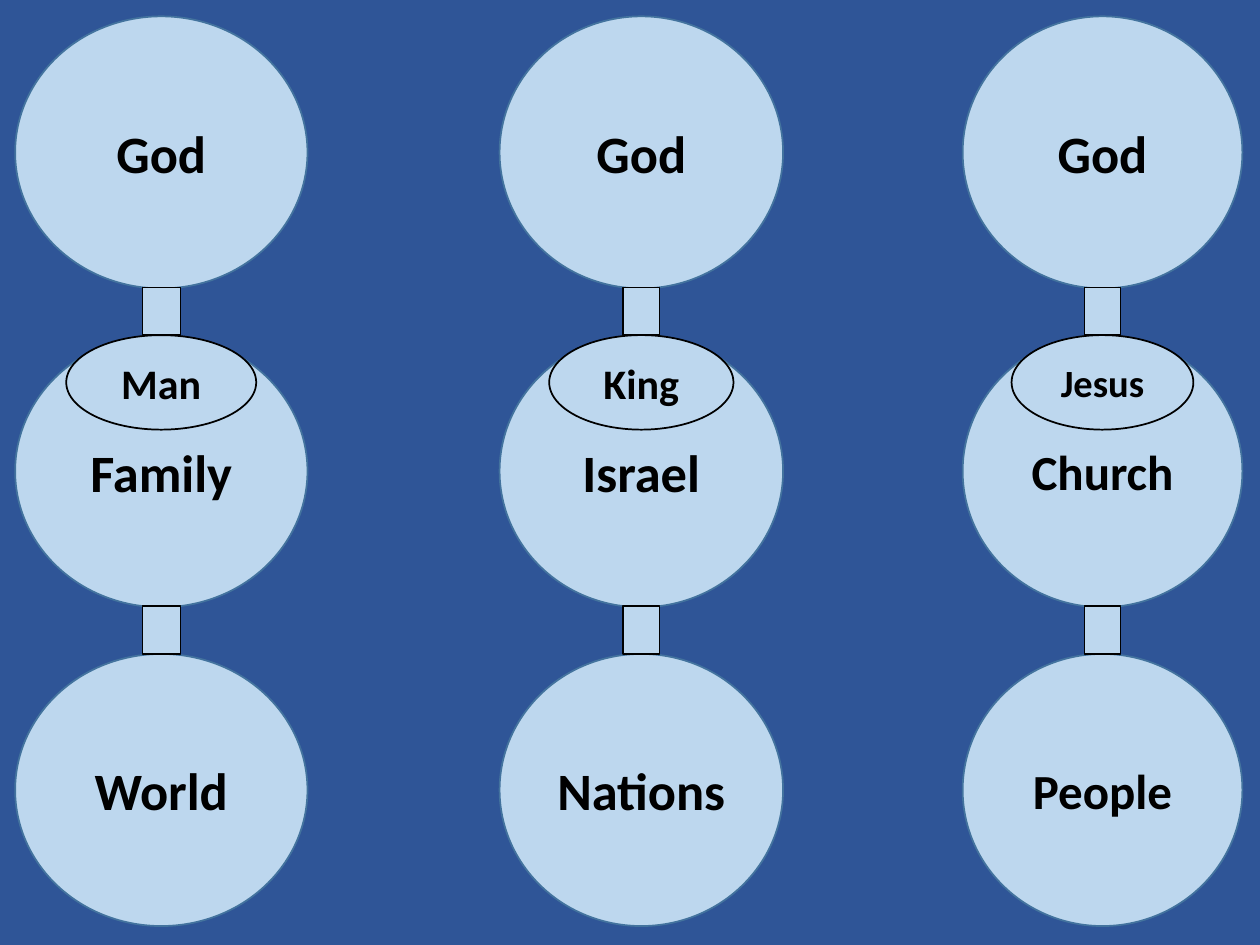
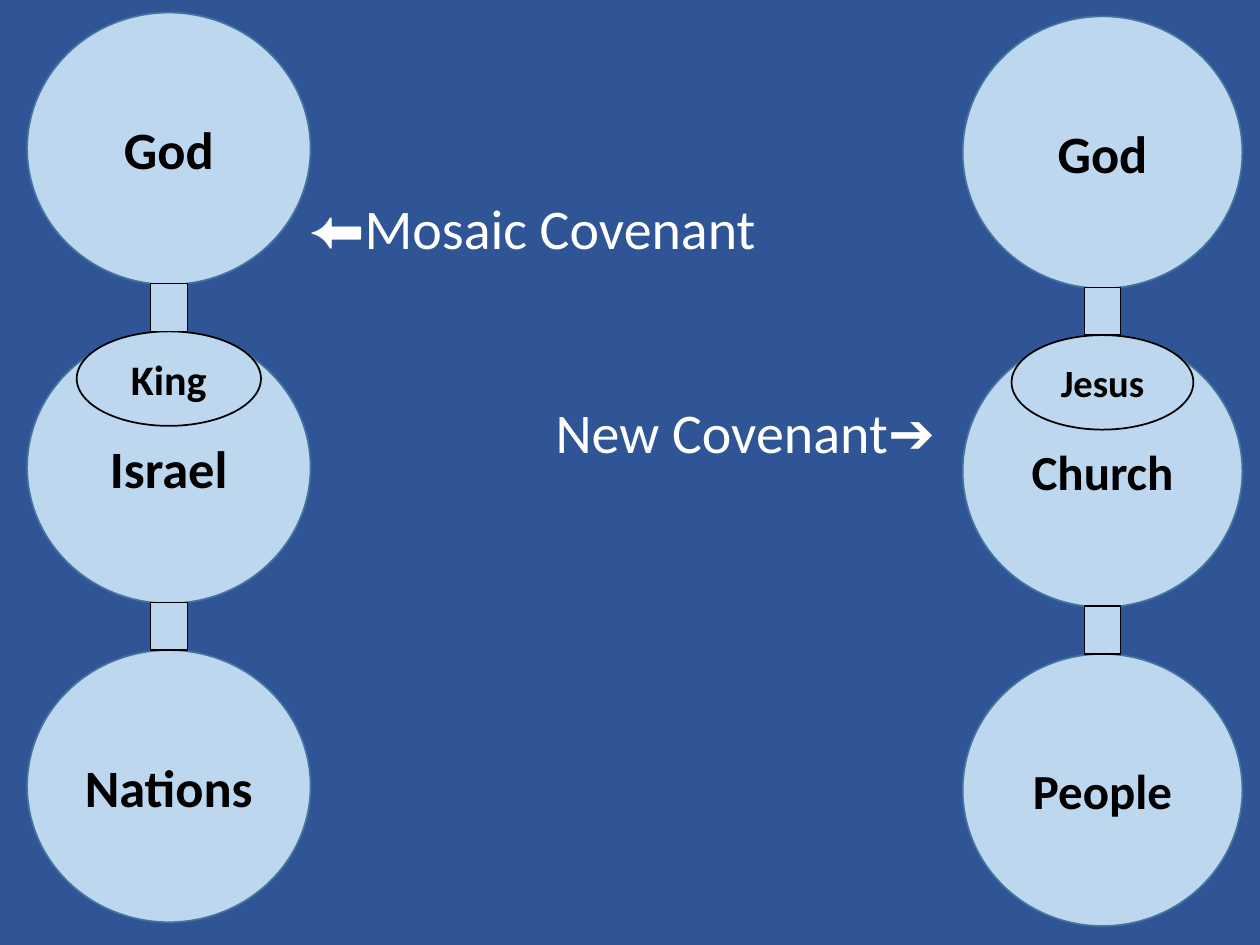
from pptx import Presentation
from pptx.dml.color import RGBColor as RGB
from pptx.enum.shapes import MSO_SHAPE as SHAPE
from pptx.enum.text import MSO_ANCHOR as ANCHOR, PP_ALIGN as ALIGN
from pptx.util import Inches, Pt

COLORS = {"back": "2F5597", "fill": "BDD7EE", "rim": "43739E",
          "ink": "000000", "light": "FFFFFF"}

# Vertical grid of a chain: circle, link, circle, link, circle
CIRCLE_H, LINK_H, HEAD_H = 2.16, 0.38, 0.75
PITCH = 2.53
# Widths as shares of the circle's width
HEAD_SHARE, LINK_SHARE = 0.65, 0.13

# Chains: circle width, circle words with sizes, head word with size
CHAINS = {
    "family": (2.32, [("God", 30), ("Family", 30), ("World", 30)], ("Man", 24)),
    "israel": (2.25, [("God", 30), ("Israel", 30), ("Nations", 30)], ("King", 24)),
    "church": (2.22, [("God", 30), ("Church", 28), ("People", 28)], ("Jesus", 22)),
}
# Each slide: chain, centre and top
SLIDES = [
    [("family", 1.28, 0.13), ("israel", 5.09, 0.13), ("church", 8.75, 0.13)],
    [("israel", 1.34, 0.1), ("church", 8.75, 0.13)],
]
# Covenant labels: text, alignment, space before (two lines between them)
COVENANTS = [("⬅Mosaic Covenant", ALIGN.LEFT, 0),
             ("New Covenant➔", ALIGN.RIGHT, 78)]


def write(p, text, size, color, bold, align):
    p.alignment = align
    r = p.add_run()
    r.text = text
    for name, value in {"name": "Calibri", "size": Pt(size), "bold": bold}.items():
        setattr(r.font, name, value)
    r.font.color.rgb = RGB.from_string(COLORS[color])


def add_part(grp, kind, center, top, width, height, line, weight, label=None):
    sp = grp.shapes.add_shape(kind, Inches(center - width / 2), Inches(top),
                              Inches(width), Inches(height))
    sp.shadow.inherit = False
    sp.fill.solid()
    sp.fill.fore_color.rgb = RGB.from_string(COLORS["fill"])
    sp.line.color.rgb = RGB.from_string(COLORS[line])
    sp.line.width = Pt(weight)
    if label:
        sp.text_frame.vertical_anchor = ANCHOR.MIDDLE
        write(sp.text_frame.paragraphs[0], *label, "ink", True, ALIGN.CENTER)


prs = Presentation()
prs.slide_width, prs.slide_height = Inches(10), Inches(7.5)

for number, chains in enumerate(SLIDES, 1):
    s = prs.slides.add_slide(prs.slide_layouts[6])
    s.background.fill.solid()
    s.background.fill.fore_color.rgb = RGB.from_string(COLORS["back"])

    # Covenant labels between the two chains
    if number == 2:
        box = s.shapes.add_textbox(Inches(2.35), Inches(1.49), Inches(5.17), Inches(2.26))
        tf = box.text_frame
        tf.word_wrap = True
        for i, (text, align, gap) in enumerate(COVENANTS):
            p = tf.add_paragraph() if i else tf.paragraphs[0]
            p.space_before = Pt(gap)
            write(p, text, 32, "light", False, align)

    # Chains of circles
    for name, center, top in chains:
        width, circles, head = CHAINS[name]
        grp = s.shapes.add_group_shape()
        for row, label in enumerate(circles):
            add_part(grp, SHAPE.OVAL, center, top + row * PITCH,
                     width, CIRCLE_H, "rim", 1, label)
        add_part(grp, SHAPE.OVAL, center, top + PITCH,
                 width * HEAD_SHARE, HEAD_H, "ink", 1, head)
        for row in (1, 2):
            add_part(grp, SHAPE.RECTANGLE, center, top + row * PITCH - LINK_H,
                     width * LINK_SHARE, LINK_H, "ink", 0.75)

prs.save("out.pptx")
